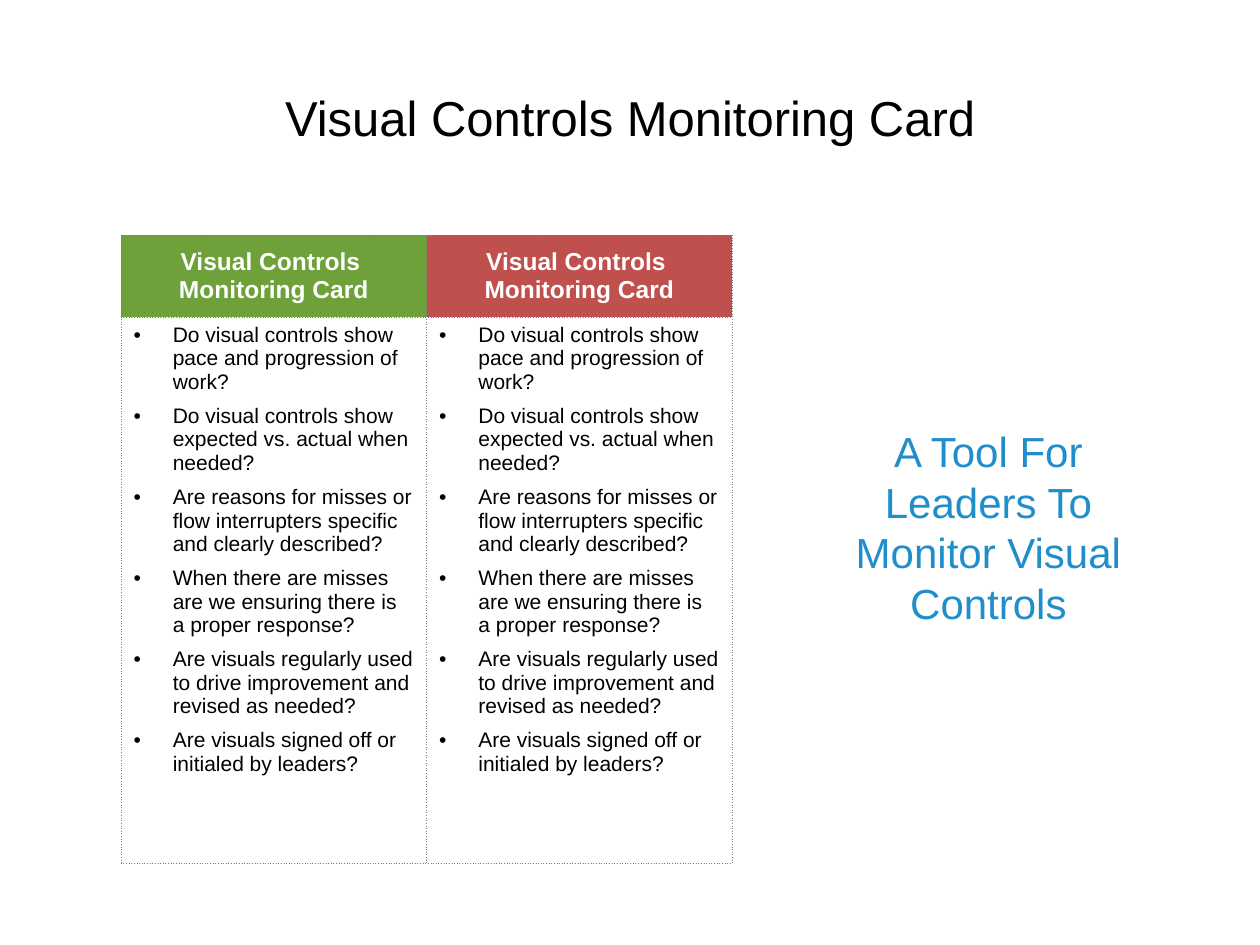
from dataclasses import dataclass

from lxml.etree import SubElement
from pptx import Presentation
from pptx.dml.color import RGBColor
from pptx.enum.text import MSO_ANCHOR, PP_ALIGN
from pptx.oxml import parse_xml
from pptx.oxml.ns import nsdecls, qn
from pptx.table import Table, _Cell
from pptx.text.text import TextFrame, _Paragraph
from pptx.util import Cm, Pt

BLACK = RGBColor(0x00, 0x00, 0x00)
WHITE = RGBColor(0xFF, 0xFF, 0xFF)
GREEN = RGBColor(0x6E, 0xA1, 0x39)
RED = RGBColor(0xC0, 0x50, 0x4D)
BLUE = RGBColor(0x20, 0x8E, 0xCB)
GREY = RGBColor(0x7F, 0x7F, 0x7F)

HEADING = "Visual Controls \vMonitoring Card"
CHECKS = [
    "Do visual controls show pace and progression of work?",
    "Do visual controls show expected vs. actual when needed?",
    "Are reasons for misses or flow interrupters specific and clearly described?",
    "When there are misses are we ensuring there is a proper response?",
    "Are visuals regularly used to drive improvement and revised as needed?",
    "Are visuals signed off or initialed by leaders?",
]


@dataclass
class Style:
    size: int
    color: RGBColor
    bold: bool = False
    align: PP_ALIGN = PP_ALIGN.CENTER


@dataclass
class Card:
    head: str
    fill: RGBColor
    items: list[str]


TITLE = Style(28, BLACK)
HEAD = Style(14, WHITE, bold=True)
ITEM = Style(12, BLACK, align=PP_ALIGN.LEFT)
ASIDE = Style(24, BLUE)
CARDS = [Card(HEADING, GREEN, CHECKS), Card(HEADING, RED, CHECKS)]


def style_par(par: _Paragraph, style: Style) -> None:
    par.alignment = style.align
    form = {"name": "Arial", "size": Pt(style.size), "bold": style.bold}
    for run in par.runs:
        for key, value in form.items():
            setattr(run.font, key, value)
        run.font.color.rgb = style.color


def write(frame: TextFrame, text: str, style: Style) -> None:
    frame.word_wrap = True
    frame.text = text
    style_par(frame.paragraphs[0], style)


def add_items(frame: TextFrame, items: list[str]) -> None:
    for num, text in enumerate(items):
        par = frame.add_paragraph() if num else frame.paragraphs[0]
        par.text = text
        par.space_after = Pt(6)
        props = par._p.get_or_add_pPr()
        props.set("marL", str(Cm(0.79)))
        props.set("indent", str(-Cm(0.79)))
        SubElement(props, qn("a:buFont"), typeface="Arial")
        SubElement(props, qn("a:buChar"), char="•")
        style_par(par, ITEM)


def set_edges(cell: _Cell) -> None:
    props = cell._tc.get_or_add_tcPr()
    for pos, side in enumerate("LRTB"):
        props.insert(pos, parse_xml(
            f'<a:ln{side} {nsdecls("a")} w="{Pt(0.25)}"><a:solidFill>'
            f'<a:srgbClr val="{GREY}"/></a:solidFill>'
            f'<a:prstDash val="sysDot"/></a:ln{side}>'))


def draw_card(table: Table, col: int, card: Card) -> None:
    table.columns[col].width = Cm(6.16)
    head, body = table.cell(0, col), table.cell(1, col)
    # Coloured heading
    head.fill.solid()
    head.fill.fore_color.rgb = card.fill
    head.vertical_anchor = MSO_ANCHOR.MIDDLE
    write(head.text_frame, card.head, HEAD)
    # Checklist
    body.fill.background()
    add_items(body.text_frame, card.items)
    for cell in (head, body):
        set_edges(cell)


def main() -> None:
    deck = Presentation()
    deck.slide_width, deck.slide_height = Cm(25.4), Cm(19.05)
    slide = deck.slides.add_slide(deck.slide_layouts[5])

    # Title
    title = slide.shapes.title
    place = {"left": 1.27, "top": 0.76, "width": 22.86, "height": 3.18}
    for key, value in place.items():
        setattr(title, key, Cm(value))
    title.text_frame.vertical_anchor = MSO_ANCHOR.MIDDLE
    write(title.text_frame, "Visual Controls Monitoring Card", TITLE)

    # Cards
    table = slide.shapes.add_table(
        2, len(CARDS), Cm(2.44), Cm(4.74), Cm(12.32), Cm(12.67)).table
    for row, tall in zip(table.rows, (1.65, 11.02)):
        row.height = Cm(tall)
    for col, card in enumerate(CARDS):
        draw_card(table, col, card)

    # Side message
    aside = slide.shapes.add_textbox(Cm(16.46), Cm(8.46), Cm(6.93), Cm(4.37))
    write(aside.text_frame, "A Tool For Leaders To Monitor Visual Controls", ASIDE)

    deck.save("out.pptx")


if __name__ == "__main__":
    main()
